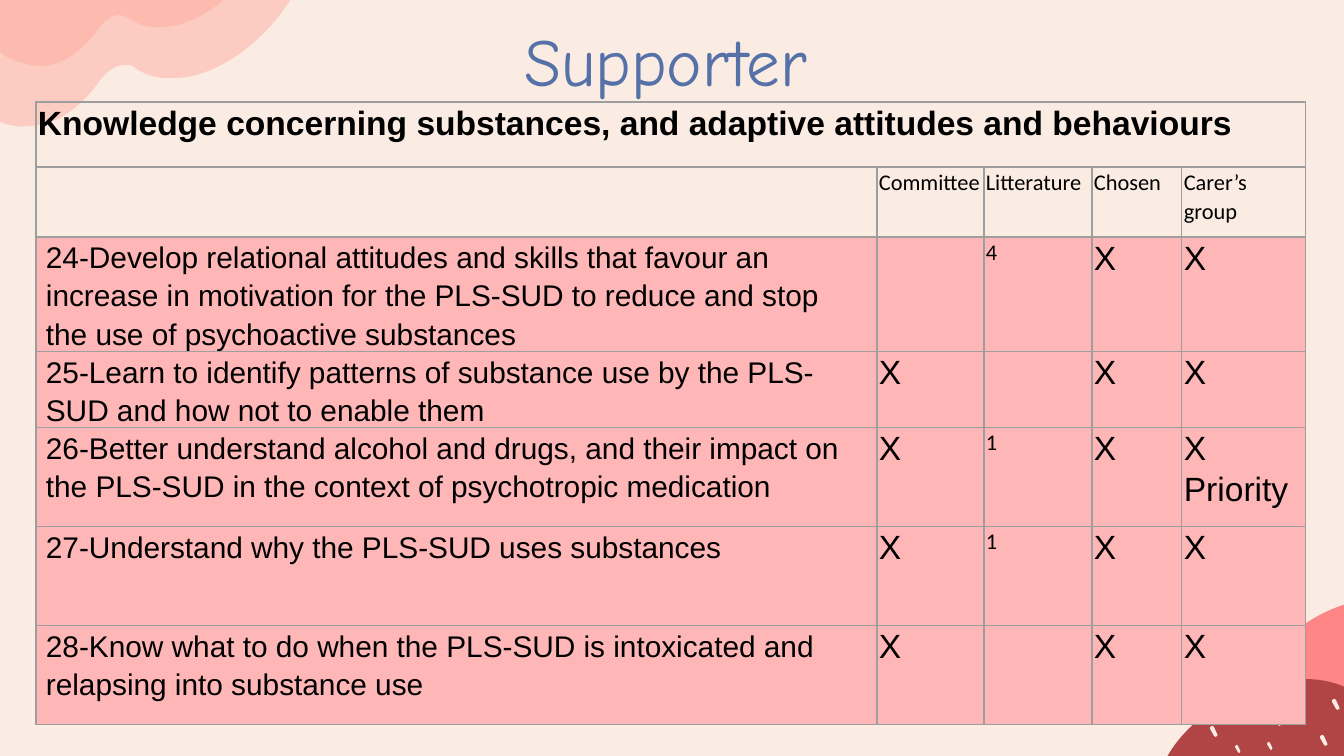
import pptx
import pptx.dml.color
import pptx.enum.text
import pptx.oxml
import pptx.oxml.ns
import pptx.util
from lxml import etree

RGB = pptx.dml.color.RGBColor
CREAM = RGB(0xFA, 0xEC, 0xE3)
PEACH = RGB(0xFF, 0xA7, 0x9B)
CORAL = RGB(0xFF, 0x86, 0x87)
DARK_RED = RGB(0xB1, 0x45, 0x45)
PINK = RGB(0xFF, 0xB6, 0xB7)
BLUE = RGB(0x55, 0x71, 0xA7)
BLACK = RGB(0, 0, 0)
GREY = RGB(0x9E, 0x9E, 0x9E)

SCALE = 914400 / 134.4  # EMU in one px

TITLE = "Supporter"
HEADING = "Knowledge concerning substances, and adaptive attitudes and behaviours"
COLUMN_NAMES = ["", "Committee", "Litterature", "Chosen", "Carer’s group"]
ITEMS = [
    ["24-Develop relational attitudes and skills that favour an increase in motivation "
     "for the PLS-SUD to reduce and stop the use of psychoactive substances",
     "", "4", "X", "X"],
    ["25-Learn to identify patterns of substance use by the PLS-SUD and how not to enable them",
     "X", "", "X", "X"],
    ["26-Better understand alcohol and drugs, and their impact on the PLS-SUD in the context "
     "of psychotropic medication", "X", "1", "X", "X Priority"],
    ["27-Understand why the PLS-SUD uses substances", "X", "1", "X", "X"],
    ["28-Know what to do when the PLS-SUD is intoxicated and relapsing into substance use",
     "X", "", "X", "X"],
]
COLUMN_WIDTHS = [841, 107, 108, 90, 124]
ROW_HEIGHTS = [65, 70, 99, 73, 99, 99, 99]
LITERATURE = 2

# Outlines: a start point, then lines (x, y) and Bézier curves (two controls, end).
OUTER_CLOUD = [
    (132, -219), (101, -210, 69, -190, 46, -163), (8, -120, -8, -71, -4, -34),
    (-3, -26, -5, -17, -11, -9), (-47, 42, -46, 99, -9, 118), (3, 124, 16, 128, 30, 126),
    (54, 125, 78, 112, 101, 79), (108, 70, 117, 65, 125, 65), (128, 65, 132, 65, 134, 67),
    (136, 69, 137, 70, 140, 71), (151, 77, 163, 79, 176, 78), (212, 77, 255, 50, 285, 8),
    (304, -17, 313, -46, 314, -70),
]
INNER_CLOUD = [
    (122, -219), (97, -211, 70, -195, 51, -172), (20, -138, 8, -98, 11, -67),
    (12, -60, 9, -54, 5, -47), (-23, -5, -22, 42, 9, 58), (19, 63, 31, 66, 42, 66),
    (62, 65, 82, 52, 99, 28), (105, 20, 113, 15, 118, 15), (122, 15, 125, 16, 126, 17),
    (129, 19, 130, 20, 132, 20), (141, 26, 152, 28, 163, 27), (192, 26, 227, 4, 251, -30),
    (266, -51, 274, -74, 276, -94),
]
CORAL_CLOUD = [
    (1535, 590), (1552, 590, 1568, 597, 1582, 609), (1611, 636, 1602, 688, 1558, 728),
    (1550, 735, 1546, 742, 1544, 749), (1540, 786, 1515, 827, 1472, 857),
    (1443, 878, 1409, 890, 1378, 891), (1238, 707), (1245, 684, 1261, 660, 1284, 640),
    (1314, 613, 1351, 598, 1383, 598), (1403, 598, 1421, 605, 1433, 617),
    (1434, 618, 1435, 620, 1437, 621), (1441, 625, 1445, 626, 1450, 626),
    (1457, 626, 1464, 624, 1470, 618), (1495, 598, 1515, 590, 1535, 590),
]
DARK_CLOUD = [
    (1304, 679), (1332, 679, 1355, 688, 1370, 706), (1370, 708, 1371, 710, 1372, 711),
    (1375, 716, 1382, 719, 1388, 719), (1394, 719, 1400, 718, 1406, 714),
    (1427, 700, 1446, 695, 1462, 695), (1485, 695, 1504, 704, 1517, 722),
    (1543, 751, 1524, 804, 1476, 835), (1466, 841, 1461, 847, 1460, 853),
    (1449, 890, 1417, 926, 1370, 950), (1344, 962, 1316, 969, 1290, 969),
    (1284, 969, 1278, 969, 1271, 968), (1163, 765), (1173, 743, 1192, 722, 1218, 706),
    (1246, 688, 1277, 679, 1304, 679),
]
CLOUDS = [(OUTER_CLOUD, PEACH, 47), (INNER_CLOUD, PEACH, 47),
          (CORAL_CLOUD, CORAL, 100), (DARK_CLOUD, DARK_RED, 100)]

# One fleck outline in fractions of its box; each fleck is left, top, width, height.
FLECK = [(0.35, 0), (0.42, 0, 0.5, 0, 0.5, 0.1), (0.9, 0.75), (1, 0.8, 0.95, 0.9, 0.85, 0.92),
         (0.7, 1), (0.6, 1, 0.5, 1, 0.5, 0.9), (0, 0.25), (0, 0.15, 0, 0.05, 0.15, 0.02)]
FLECKS = [(1235, 707, 6, 8), (1267, 742, 6, 8), (1298, 704, 6, 8), (1274, 715, 8, 11),
          (1332, 699, 8, 11), (1210, 726, 8, 11), (1320, 735, 8, 11), (1235, 745, 6, 8)]


def px(length):
    return pptx.util.Emu(round(length * SCALE))


def place(segment, left, top, width, height):
    """Map the fractions of one segment into a box."""
    return tuple(top + value * height if index % 2 else left + value * width
                 for index, value in enumerate(segment))


def add_outline(slide, outline, color, opacity=100):
    """Draw all points as a polygon, then join each three of a curve into one Bézier."""
    points = [(px(segment[i]), px(segment[i + 1]))
              for segment in outline for i in range(0, len(segment), 2)]
    builder = slide.shapes.build_freeform(*points[0], scale=1.0)
    builder.add_line_segments(points[1:], close=True)
    shape = builder.convert_to_shape()
    lines = iter(shape._element.findall(".//" + pptx.oxml.ns.qn("a:lnTo")))
    for segment in outline[1:]:
        parts = [next(lines) for _ in range(len(segment) // 2)]
        if len(parts) == 3:
            curve = etree.Element(pptx.oxml.ns.qn("a:cubicBezTo"))
            parts[0].addprevious(curve)
            for part in parts:
                curve.append(part[0])
                part.getparent().remove(part)
    shape.shadow.inherit = False
    shape.line.fill.background()
    shape.fill.solid()
    shape.fill.fore_color.rgb = color
    if opacity < 100:
        color_element = shape._element.spPr.find(".//" + pptx.oxml.ns.qn("a:srgbClr"))
        etree.SubElement(color_element, pptx.oxml.ns.qn("a:alpha"), val=str(opacity * 1000))


def format_font(paragraph, name, size, color, bold=False):
    for run in paragraph.runs:
        run.font.name = name
        run.font.size = pptx.util.Pt(size)
        run.font.bold = bold
        run.font.color.rgb = color


def add_borders(cell):
    properties = cell._tc.get_or_add_tcPr()
    for side in ("lnL", "lnR", "lnT", "lnB"):
        properties.append(pptx.oxml.parse_xml(
            f'<a:{side} {pptx.oxml.ns.nsdecls("a")} w="9525"><a:solidFill>'
            f'<a:srgbClr val="{GREY}"/></a:solidFill></a:{side}>'))


def fill_cell(cell, text, font, size, bold, background, wide):
    """Write one cell; wide cells have a larger inset and looser lines."""
    add_borders(cell)
    if background is None:
        cell.fill.background()
    else:
        cell.fill.solid()
        cell.fill.fore_color.rgb = background
    if not text:
        return
    cell.margin_left = cell.margin_right = px(10 if wide else 2)
    cell.margin_top = cell.margin_bottom = 0
    cell.text_frame.text = text
    paragraph = cell.text_frame.paragraphs[0]
    paragraph.line_spacing = 1.15 if wide else 1.07
    paragraph.space_after = pptx.util.Pt(10 if wide else 8)
    format_font(paragraph, font, size, BLACK, bold)


def add_title(slide):
    title = slide.shapes.title
    title.left, title.top, title.width, title.height = px(99), px(17), px(1133), px(85)
    frame = title.text_frame
    frame.text = TITLE
    frame.auto_size = pptx.enum.text.MSO_AUTO_SIZE.NONE
    frame.vertical_anchor = pptx.enum.text.MSO_ANCHOR.MIDDLE
    frame.margin_left = frame.margin_right = frame.margin_top = frame.margin_bottom = 0
    frame.paragraphs[0].alignment = pptx.enum.text.PP_ALIGN.CENTER
    format_font(frame.paragraphs[0], "Comic Neue", 36, BLUE)


def add_skills_table(slide):
    rows = [[HEADING, "", "", "", ""], COLUMN_NAMES] + ITEMS
    table = slide.shapes.add_table(len(rows), len(COLUMN_WIDTHS), px(36), px(102),
                                   px(sum(COLUMN_WIDTHS)), px(sum(ROW_HEIGHTS))).table
    table.first_row = table.horz_banding = False
    for column, width in zip(table.columns, COLUMN_WIDTHS):
        column.width = px(width)
    for row, height in zip(table.rows, ROW_HEIGHTS):
        row.height = px(height)
    for r, texts in enumerate(rows):
        for c, text in enumerate(texts):
            is_item = r > 1
            wide = is_item and c == 0
            small = r == 1 or (is_item and c == LITERATURE)
            font, size = ("Calibri", 12) if small else ("Arial", 16 if wide else 18)
            fill_cell(table.cell(r, c), text, font, size, r == 0, PINK if is_item else None, wide)
    table.cell(0, 0).merge(table.cell(0, len(COLUMN_WIDTHS) - 1))


def main():
    presentation = pptx.Presentation()
    presentation.slide_width, presentation.slide_height = px(1344), px(756)
    slide = presentation.slides.add_slide(presentation.slide_layouts[5])
    slide.background.fill.solid()
    slide.background.fill.fore_color.rgb = CREAM
    for outline, color, opacity in CLOUDS:
        add_outline(slide, outline, color, opacity)
    for box in FLECKS:
        add_outline(slide, [place(segment, *box) for segment in FLECK], CREAM)
    add_title(slide)
    add_skills_table(slide)
    presentation.save("out.pptx")


if __name__ == "__main__":
    main()
